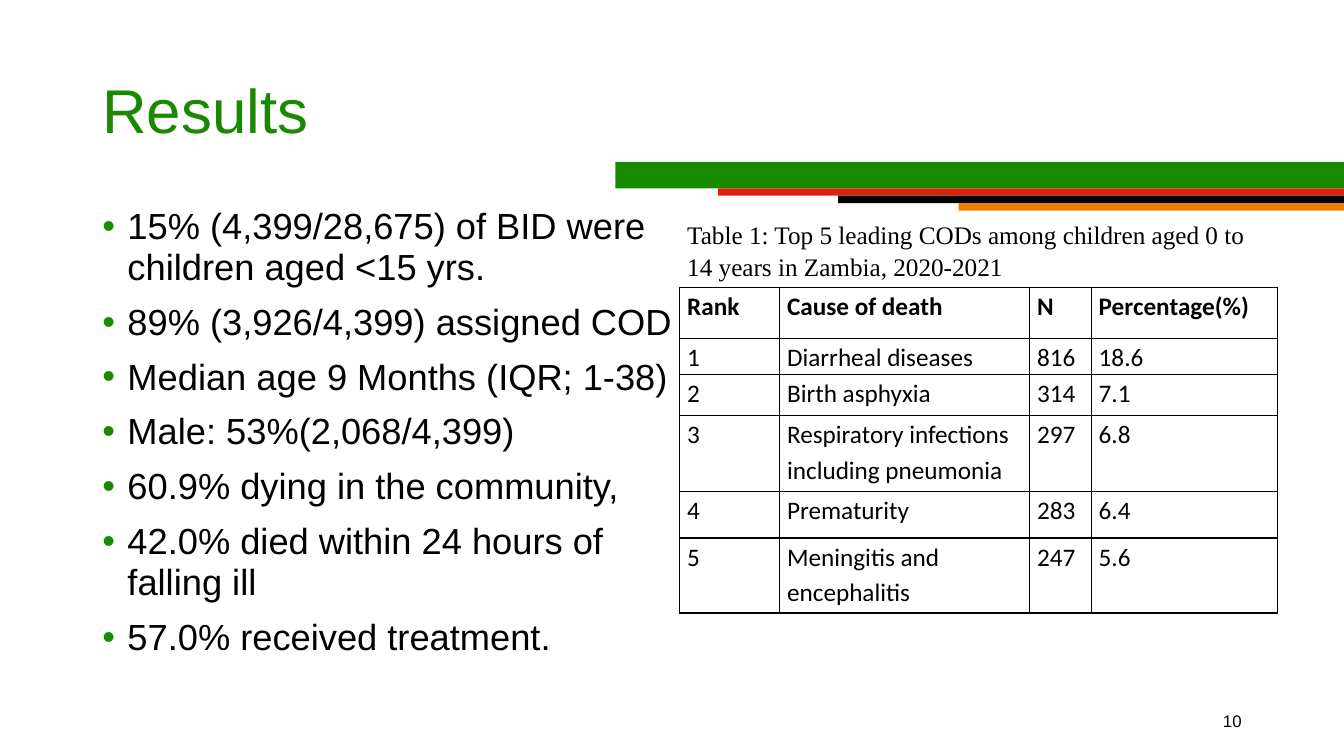
from lxml.etree import SubElement
from pptx import Presentation
from pptx.dml.color import RGBColor
from pptx.enum.shapes import MSO_SHAPE
from pptx.enum.text import MSO_ANCHOR, PP_ALIGN
from pptx.oxml.ns import qn
from pptx.util import Pt

COLORS = {
    "green": "198A00",
    "red": "DE2010",
    "black": "000000",
    "orange": "EF7D00",
}

SLIDE_WIDTH = 960
STRIPES = [
    ("green", 439.6, 115.7, 18.8),
    ("red", 512.8, 134.5, 5.3),
    ("black", 598.7, 139.8, 5.3),
    ("orange", 684.8, 145.1, 5.3),
]

FINDINGS = [
    "15% (4,399/28,675) of BID were children aged ˂15 yrs.",
    "89% (3,926/4,399) assigned COD",
    "Median age 9 Months (IQR; 1-38)",
    "Male: 53%(2,068/4,399)",
    "60.9% dying in the community,",
    "42.0% died within 24 hours of falling ill",
    "57.0% received treatment.",
]

CAPTION = "Table 1: Top 5 leading CODs among children aged 0 to 14 years in Zambia, 2020-2021"
CAUSES = [
    ("Rank", "Cause of death", "N", "Percentage(%)"),
    ("1", "Diarrheal diseases", "816", "18.6"),
    ("2", "Birth asphyxia", "314", "7.1"),
    ("3", "Respiratory infections including pneumonia", "297", "6.8"),
    ("4", "Prematurity", "283", "6.4"),
    ("5", "Meningitis and encephalitis", "247", "5.6"),
]
COLUMN_WIDTHS = [71.4, 178.6, 44, 133]
ROW_HEIGHTS = [45.2, 36.4, 25.8, 29.2, 54.2, 33.5, 53.6]

TITLE_FORMAT = {"line_spacing": 0.9}
FINDING_FORMAT = {"line_spacing": 0.94, "space_before": Pt(10)}
NUMBER_FORMAT = {"alignment": PP_ALIGN.RIGHT}
CELL_FORMAT = {"line_spacing": 1.15, "space_after": Pt(8)}
CELL_MARGINS = {
    "margin_left": Pt(5.4),
    "margin_right": Pt(5.4),
    "margin_top": 0,
    "margin_bottom": 0,
}


def set_attributes(target, values):
    for name, value in values.items():
        setattr(target, name, value)


def write_paragraph(paragraph, text, paragraph_format, size, color="black", name="Arial", bold=False):
    run = paragraph.add_run()
    run.text = text
    set_attributes(paragraph, paragraph_format)
    set_attributes(run.font, {"size": Pt(size), "name": name, "bold": bold})
    run.font.color.rgb = RGBColor.from_string(COLORS[color])


def add_bullet(paragraph, color):
    properties = paragraph._p.get_or_add_pPr()
    properties.set("marL", str(Pt(18)))
    properties.set("indent", str(-Pt(18)))
    bullet_color = SubElement(properties, qn("a:buClr"))
    SubElement(bullet_color, qn("a:srgbClr"), val=COLORS[color])
    SubElement(properties, qn("a:buFont"), typeface="Arial")
    SubElement(properties, qn("a:buChar"), char="•")


def add_stripe(slide, color, left, top, height):
    shape = slide.shapes.add_shape(
        MSO_SHAPE.RECTANGLE, Pt(left), Pt(top), Pt(SLIDE_WIDTH - left), Pt(height)
    )
    shape.shadow.inherit = False
    shape.fill.solid()
    shape.fill.fore_color.rgb = RGBColor.from_string(COLORS[color])
    shape.line.fill.background()


def add_text_frame(slide, left, top, width, height, anchor):
    frame = slide.shapes.add_textbox(Pt(left), Pt(top), Pt(width), Pt(height)).text_frame
    set_attributes(frame, {"word_wrap": True, "vertical_anchor": anchor})
    return frame


def add_findings(slide):
    frame = add_text_frame(slide, 66, 144, 434.2, 342.7, MSO_ANCHOR.TOP)
    for index, finding in enumerate(FINDINGS):
        paragraph = frame.add_paragraph() if index else frame.paragraphs[0]
        write_paragraph(paragraph, finding, FINDING_FORMAT, 25.9)
        add_bullet(paragraph, "green")


def set_borders(cell, visible_sides):
    properties = cell._tc.get_or_add_tcPr()
    for side in "LRTB":
        line = SubElement(properties, qn(f"a:ln{side}"), w=str(Pt(1)))
        if side in visible_sides:
            fill = SubElement(line, qn("a:solidFill"))
            SubElement(fill, qn("a:srgbClr"), val=COLORS["black"])
        else:
            SubElement(line, qn("a:noFill"))


def write_cell(cell, text, name, bold=False):
    set_attributes(cell, CELL_MARGINS)
    write_paragraph(cell.text_frame.paragraphs[0], text, CELL_FORMAT, 18, name=name, bold=bold)


def add_causes_table(slide):
    table = slide.shapes.add_table(
        len(ROW_HEIGHTS), len(COLUMN_WIDTHS), Pt(485.5), Pt(155.5),
        Pt(sum(COLUMN_WIDTHS)), Pt(sum(ROW_HEIGHTS)),
    ).table
    set_attributes(table, {"first_row": False, "horz_banding": False})
    for column, width in zip(table.columns, COLUMN_WIDTHS):
        column.width = Pt(width)
    for index, (row, height) in enumerate(zip(table.rows, ROW_HEIGHTS)):
        row.height = Pt(height)
        for cell in row.cells:
            set_borders(cell, "LRTB" if index else "B")
            cell.fill.background()
    caption = table.cell(0, 0)
    caption.merge(table.cell(0, len(COLUMN_WIDTHS) - 1))
    write_cell(caption, CAPTION, "Times New Roman")
    for row_index, values in enumerate(CAUSES, start=1):
        for column_index, value in enumerate(values):
            write_cell(table.cell(row_index, column_index), value, "Calibri", row_index == 1)


def main():
    presentation = Presentation()
    set_attributes(presentation, {"slide_width": Pt(SLIDE_WIDTH), "slide_height": Pt(540)})
    slide = presentation.slides.add_slide(presentation.slide_layouts[6])
    for stripe in STRIPES:
        add_stripe(slide, *stripe)
    title = add_text_frame(slide, 66, 28.8, 828, 104.4, MSO_ANCHOR.MIDDLE)
    write_paragraph(title.paragraphs[0], "Results", TITLE_FORMAT, 44.1, "green")
    add_findings(slide)
    number = add_text_frame(slide, 678, 500.5, 216, 28.8, MSO_ANCHOR.MIDDLE)
    write_paragraph(number.paragraphs[0], "10", NUMBER_FORMAT, 12)
    add_causes_table(slide)
    presentation.save("out.pptx")


if __name__ == "__main__":
    main()
